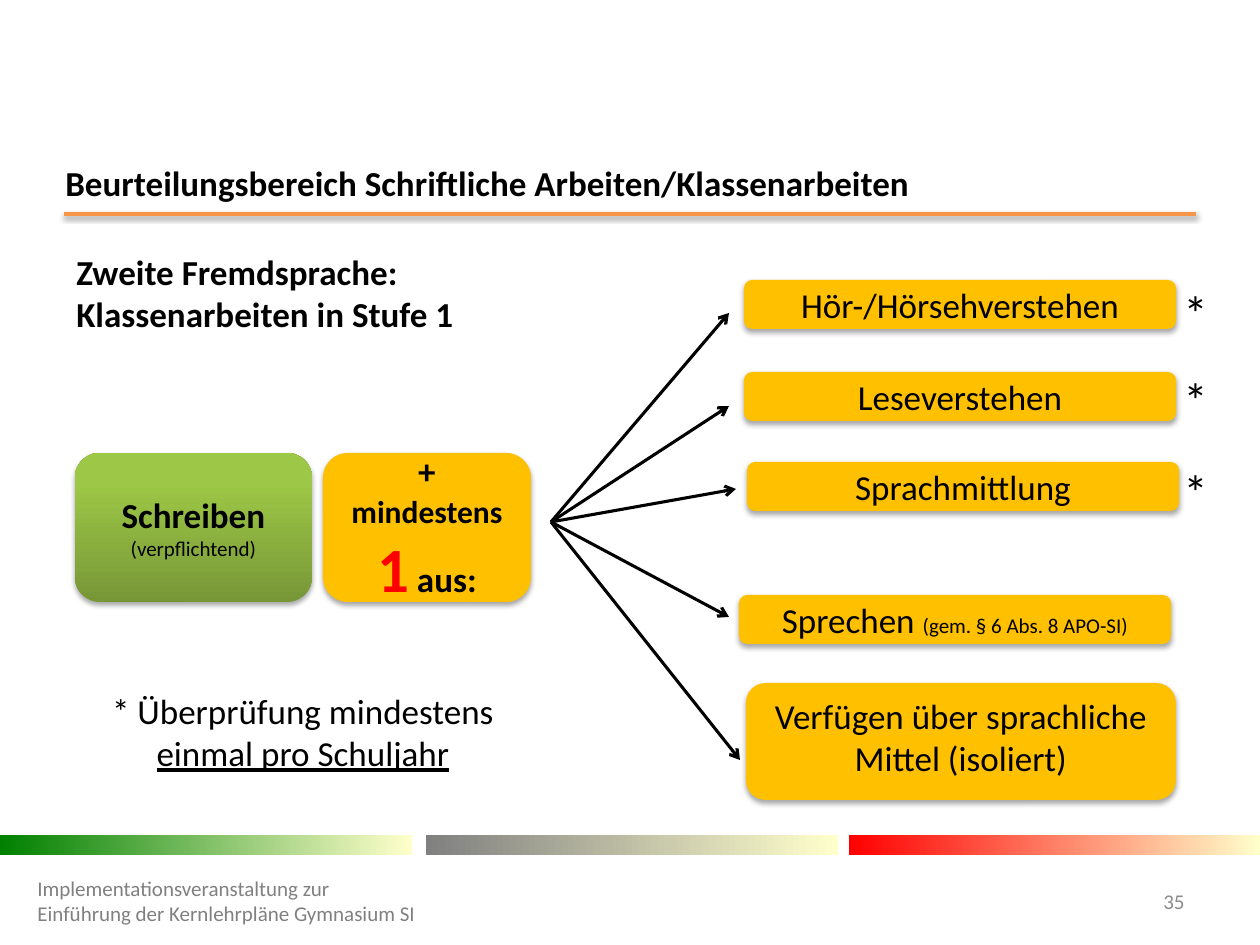
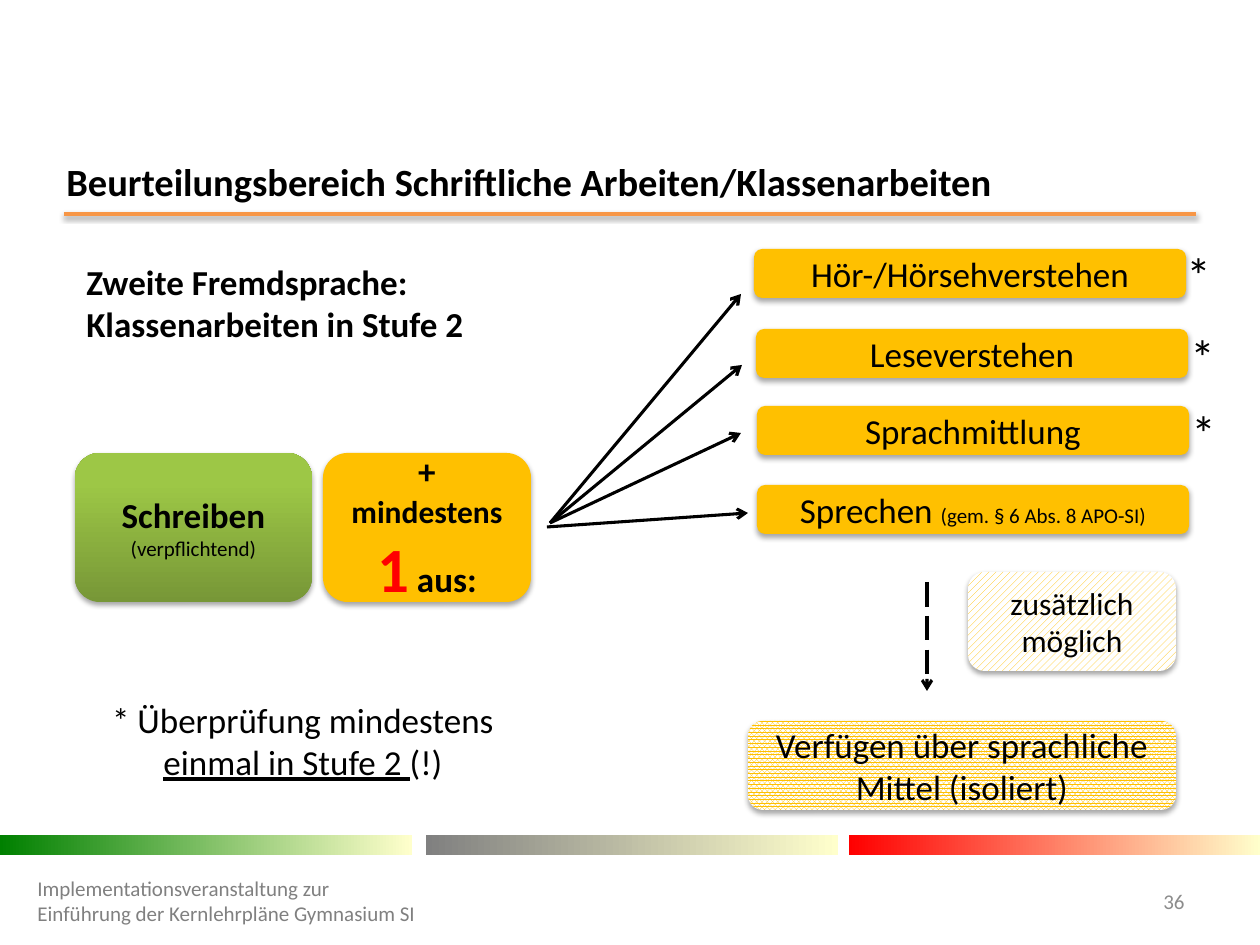
import pptx
import pptx.util
import pptx.dml.color
import pptx.enum.dml
import pptx.enum.shapes
import pptx.enum.text
import pptx.oxml
import pptx.oxml.ns

SCALE = 914400 / 126
FONT = "Calibri"
BLACK, RED, ORANGE, AMBER, WHITE = "000000", "FF0000", "F79646", "FFC000", "FFFFFF"
CREAM, FOOTER_GREY, NUMBER_GREY = "FFFFCC", "808080", "8C8C8C"
LEAF_DARK, LEAF_LIGHT = "779737", "9DC746"
BANDS = [("008000", 0), ("808080", 426), ("FF0000", 849)]
TITLE = "Beurteilungsbereich Schriftliche Arbeiten/Klassenarbeiten"
EVENT = "Implementationsveranstaltung zur\vEinführung der Kernlehrpläne Gymnasium SI"
LANGUAGE_MEANS = "Verfügen über sprachliche Mittel (isoliert)"
SPEAKING = [("Sprechen ", {}), ("(gem. § 6 Abs. 8 APO-SI)", {"size": 12})]
SHAPES = pptx.enum.shapes.MSO_SHAPE
ALIGN = pptx.enum.text.PP_ALIGN
ANCHOR = pptx.enum.text.MSO_ANCHOR
PATTERN = pptx.enum.dml.MSO_PATTERN


def px(length):
    return pptx.util.Emu(round(length * SCALE))


def rgb(value):
    return pptx.dml.color.RGBColor.from_string(value)


def set_effects(item, shadow=None):
    inner = ""
    if shadow:
        blur, distance, alpha = shadow
        inner = (f'<a:outerShdw blurRad="{round(blur * 12700)}" dist="{round(distance * 12700)}" '
                 f'dir="5400000" rotWithShape="0"><a:srgbClr val="{BLACK}">'
                 f'<a:alpha val="{alpha * 1000}"/></a:srgbClr></a:outerShdw>')
    properties = item._element.spPr
    for old in properties.findall(pptx.oxml.ns.qn("a:effectLst")):
        properties.remove(old)
    namespace = pptx.oxml.ns.nsdecls("a")
    properties.append(pptx.oxml.parse_xml(f"<a:effectLst {namespace}>{inner}</a:effectLst>"))


def write(shape, paragraphs, size=20, color=BLACK, bold=False, underline=False,
          align=ALIGN.LEFT, anchor=ANCHOR.MIDDLE):
    frame = shape.text_frame
    frame.word_wrap = True
    frame.vertical_anchor = anchor
    if isinstance(paragraphs, str):
        paragraphs = [paragraphs]
    for index, runs in enumerate(paragraphs):
        paragraph = frame.add_paragraph() if index else frame.paragraphs[0]
        paragraph.alignment = align
        for text, change in [(runs, {})] if isinstance(runs, str) else runs:
            style = {"size": size, "color": color, "bold": bold, "underline": underline} | change
            for part, line in enumerate(text.split("\v")):
                if part:
                    paragraph.add_line_break()
                run = paragraph.add_run()
                run.text = line
                run.font.name = FONT
                run.font.size = pptx.util.Pt(style["size"])
                run.font.bold = style["bold"]
                run.font.underline = style["underline"]
                run.font.color.rgb = rgb(style["color"])


def add_text(slide, box, paragraphs, **style):
    write(slide.shapes.add_textbox(*map(px, box)), paragraphs, **style)


def fill_gradient(shape, start, end, angle, end_position=1):
    shape.fill.gradient()
    shape.fill.gradient_angle = angle
    first, last = shape.fill.gradient_stops
    first.color.rgb, first.position = rgb(start), 0
    last.color.rgb, last.position = rgb(end), end_position


def add_panel(slide, box, paragraphs, pattern=None, gradient=None, **style):
    panel = slide.shapes.add_shape(SHAPES.ROUNDED_RECTANGLE, *map(px, box))
    panel.line.fill.background()
    if gradient:
        fill_gradient(panel, *gradient)
    elif pattern:
        panel.fill.patterned()
        panel.fill.pattern = pattern
        panel.fill.fore_color.rgb = rgb(AMBER)
        panel.fill.back_color.rgb = rgb(WHITE)
    else:
        panel.fill.solid()
        panel.fill.fore_color.rgb = rgb(AMBER)
    set_effects(panel, (3.1, 1.8, 35))
    write(panel, paragraphs, align=ALIGN.CENTER, **style)


def add_line(slide, start, end, color=BLACK, width=1.75, shadow=None):
    line = slide.shapes.add_connector(pptx.enum.shapes.MSO_CONNECTOR.STRAIGHT,
                                      *map(px, start + end))
    line.line.color.rgb = rgb(color)
    line.line.width = pptx.util.Pt(width)
    set_effects(line, shadow)
    return line


def add_arrow(slide, start, end, dashed=False):
    arrow = add_line(slide, start, end)
    if dashed:
        arrow.line.dash_style = pptx.enum.dml.MSO_LINE.LONG_DASH
    namespace = pptx.oxml.ns.nsdecls("a")
    arrow.line._get_or_add_ln().append(
        pptx.oxml.parse_xml(f'<a:tailEnd {namespace} type="arrow"/>'))


def add_header(slide, box, title_left, title_middle, title_size):
    left, top, width, height = box
    rule = top + height
    add_line(slide, (left, rule), (left + width, rule), ORANGE, 2, (3.1, 1.6, 38))
    add_text(slide, (title_left, title_middle - 30, 1125, 60), TITLE, size=title_size, bold=True)


def add_footer(slide, box, number):
    left, top, width, height = box
    for color, offset in BANDS:
        band = slide.shapes.add_shape(SHAPES.RECTANGLE, *map(px, (left + offset, top, 412, 20)))
        band.line.fill.background()
        band.shadow.inherit = False
        fill_gradient(band, color, CREAM, 0)
    add_text(slide, (left + 25, top + 41, 408, 50), EVENT, size=12, color=FOOTER_GREY)
    add_text(slide, (left + width - 144, top + 41, 81, 50), str(number), size=12,
             color=NUMBER_GREY, align=ALIGN.RIGHT)


def add_requirement(slide, box):
    left, top, width, height = box
    add_panel(slide, (left, top, 237, height),
              ["Schreiben", [("(verpflichtend)", {"size": 12, "bold": False})]],
              gradient=(LEAF_DARK, LEAF_LIGHT, 90, 0.8), bold=True)
    add_panel(slide, (left + width - 208, top, 208, height),
              [[("+", {}), (" mindestens ", {"size": 18}),
                ("1", {"size": 36, "color": RED}), (" aus:", {})]], bold=True)


def add_skills(slide, box, bars, stars):
    left, top, width, height = box
    labels = ["Hör-/Hörsehverstehen", "Leseverstehen", "Sprachmittlung", SPEAKING]
    for label, (across, down) in zip(labels, bars):
        add_panel(slide, (left + across, top + down, width, height), [label])
    for across, down in stars:
        add_text(slide, (left + across, top + down, 45, 72), "*", size=28, anchor=ANCHOR.TOP)


def add_exam_slide(deck, number, title, heading, note, skills, fan):
    slide = deck.slides.add_slide(deck.slide_layouts[6])
    add_header(slide, (64, 132, 1132, 82), *title)
    add_footer(slide, (0, 835, 1260, 110), number)
    heading_box, stage = heading
    add_text(slide, heading_box, ["Zweite Fremdsprache:", f"Klassenarbeiten in Stufe {stage}"],
             bold=True, anchor=ANCHOR.TOP)
    add_requirement(slide, (75, 453, 456, 149))
    note_top, note_runs = note
    add_text(slide, (75, note_top, 456, 139), ["* Überprüfung mindestens", note_runs],
             align=ALIGN.CENTER)
    add_skills(slide, *skills)
    origin, targets = fan
    for target in targets:
        add_arrow(slide, origin, target)
    return slide


def add_optional_means(slide, box):
    left, top, width, height = box
    add_arrow(slide, (left + 179, top + 10), (left + 179, top + 119), dashed=True)
    add_panel(slide, (left + width - 208, top, 208, 99), "zusätzlich möglich",
              pattern=PATTERN.WIDE_UPWARD_DIAGONAL, size=18)
    add_panel(slide, (left, top + height - 89, width, 89), LANGUAGE_MEANS,
              pattern=PATTERN.PERCENT_80)


def main():
    deck = pptx.Presentation()
    deck.slide_width, deck.slide_height = px(1260), px(945)

    stage_one = add_exam_slide(
        deck, 35, (53, 183, 20), ((64, 244, 595, 140), 1),
        (662, [("einmal pro Schuljahr", {"underline": True})]),
        ((744, 280, 432, 49), [(0, 0), (0, 92), (3, 182), (-5, 315)],
         [(427, -4), (427, 83), (427, 175)]),
        ((551, 522), [(729, 313), (729, 406), (736, 489), (729, 617), (740, 760)]))
    add_panel(stage_one, (746, 683, 430, 117), LANGUAGE_MEANS, anchor=ANCHOR.TOP)

    stage_two = add_exam_slide(
        deck, 36, (54, 181, 22), ((74, 254, 566, 178), 2),
        (671, [("einmal in Stufe 2 ", {"underline": True}), ("(!)", {})]),
        ((754, 249, 432, 49), [(0, 0), (2, 80), (3, 157), (3, 236)],
         [(420, -11), (424, 71), (425, 147)]),
        ((550, 523), [(741, 294), (742, 365), (741, 433)]))
    add_arrow(stage_two, (547, 527), (748, 513))
    add_optional_means(stage_two, (748, 572, 428, 238))

    deck.save("out.pptx")


if __name__ == "__main__":
    main()
